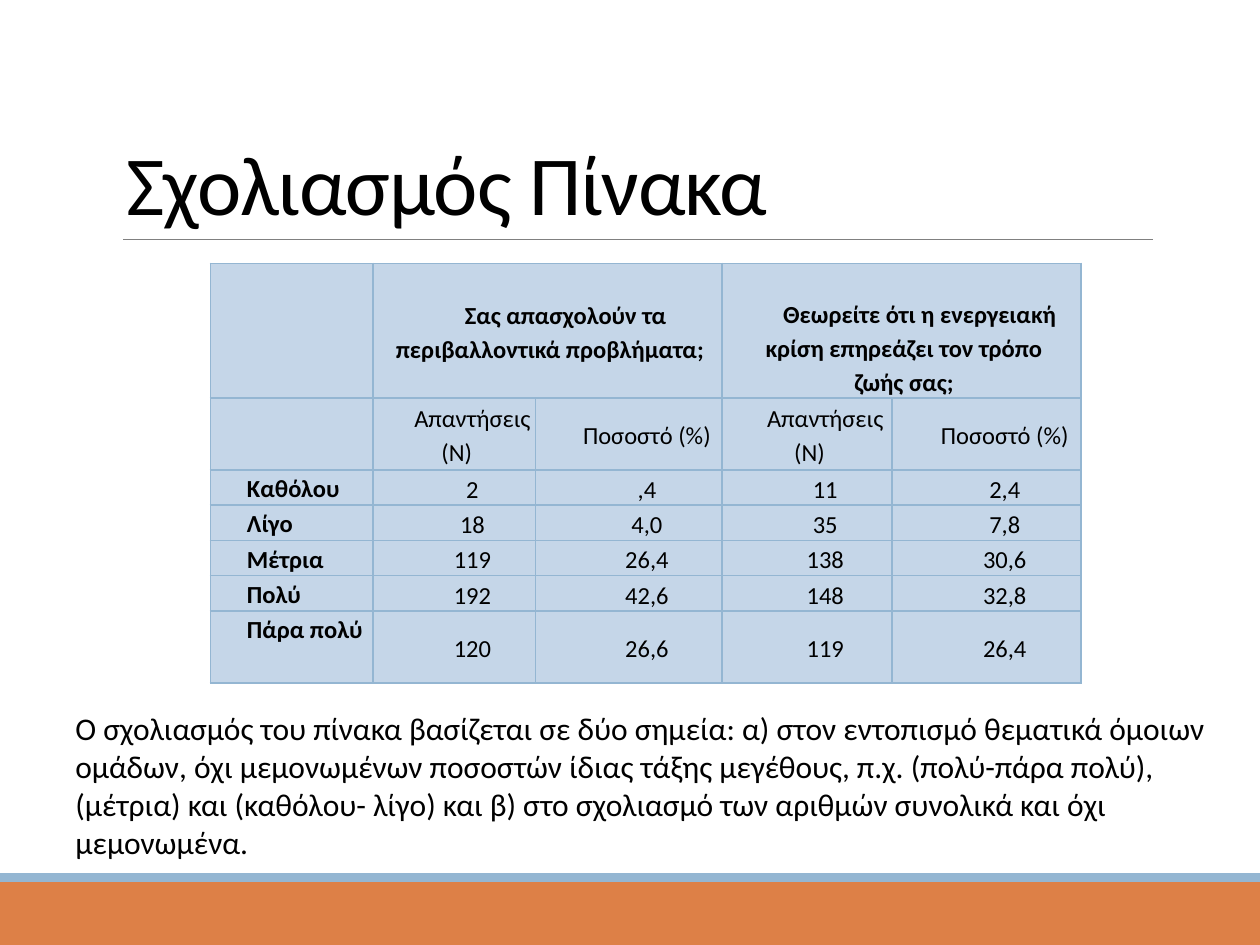
from dataclasses import dataclass

from lxml import etree
from pptx import Presentation
from pptx import util as u
from pptx.dml.color import RGBColor
from pptx.enum import shapes, text
from pptx.oxml import ns

Inches = u.Inches


@dataclass(frozen=True)
class Theme:
    font: str = "Calibri"
    ink: str = "000000"
    orange: str = "DD8047"
    blue: str = "94B6D2"
    cell: str = "C5D6E8"
    rule: str = "808080"
    title_size: int = 48
    body_size: int = 18
    table_size: int = 14


THEME = Theme()
CENTER, LEFT = text.PP_ALIGN.CENTER, text.PP_ALIGN.LEFT
MIDDLE, TOP, BOTTOM = (text.MSO_ANCHOR.MIDDLE, text.MSO_ANCHOR.TOP,
                       text.MSO_ANCHOR.BOTTOM)

TITLE = "Σχολιασμός Πίνακα"
COMMENT = ("Ο σχολιασμός του πίνακα βασίζεται σε δύο σημεία: α) στον εντοπισμό "
           "θεματικά όμοιων ομάδων, όχι μεμονωμένων ποσοστών ίδιας τάξης μεγέθους, "
           "π.χ. (πολύ-πάρα πολύ), (μέτρια) και (καθόλου- λίγο) και β) στο "
           "σχολιασμό των αριθμών συνολικά και όχι μεμονωμένα.")
QUESTIONS = [
    ("Σας απασχολούν τα περιβαλλοντικά προβλήματα;", MIDDLE),
    ("Θεωρείτε ότι η ενεργειακή κρίση επηρεάζει τον τρόπο\vζωής σας;", BOTTOM),
]
MEASURES = ["Απαντήσεις (Ν)", "Ποσοστό (%)"]
ANSWERS = [
    ("Καθόλου", "2", ",4", "11", "2,4"),
    ("Λίγο", "18", "4,0", "35", "7,8"),
    ("Μέτρια", "119", "26,4", "138", "30,6"),
    ("Πολύ", "192", "42,6", "148", "32,8"),
    ("Πάρα πολύ", "120", "26,6", "119", "26,4"),
]
COLUMN_WIDTHS = [1.29, 1.29, 1.48, 1.35, 1.5]
ROW_HEIGHTS = [1.07, 0.57, 0.28, 0.28, 0.28, 0.28, 0.57]


def write(frame, content, size, bold=False, align=LEFT, anchor=TOP, spacing=1.0):
    frame.word_wrap = True
    frame.vertical_anchor = anchor
    frame.text = content
    paragraph = frame.paragraphs[0]
    paragraph.alignment = align
    paragraph.line_spacing = spacing
    for run in paragraph.runs:
        run.font.name = THEME.font
        run.font.size = u.Pt(size)
        run.font.bold = bold
        run.font.color.rgb = RGBColor.from_string(THEME.ink)
    return paragraph


def place(shape, box):
    shape.left, shape.top, shape.width, shape.height = map(Inches, box)


def add_band(slide, box, color):
    band = slide.shapes.add_shape(shapes.MSO_SHAPE.RECTANGLE, *map(Inches, box))
    band.shadow.inherit = False
    band.fill.solid()
    band.fill.fore_color.rgb = RGBColor.from_string(color)
    band.line.fill.background()


def add_frame(slide, footer_box, rule_box):
    # Footer: a thin blue strip above an orange band
    left, top, width, height = footer_box
    strip = 0.07
    add_band(slide, (left, top + strip, width, height - strip), THEME.orange)
    add_band(slide, (left, top, width, strip), THEME.blue)
    # Rule under the title
    left, top, width, _ = rule_box
    rule = slide.shapes.add_connector(
        shapes.MSO_CONNECTOR.STRAIGHT, *map(Inches, (left, top, left + width, top)))
    rule.line.color.rgb = RGBColor.from_string(THEME.rule)
    rule.line.width = u.Pt(0.5)
    etree.SubElement(rule.element.spPr, ns.qn("a:effectLst"))


def add_title(slide, box):
    title = slide.shapes.title
    place(title, box)
    paragraph = write(title.text_frame, TITLE, THEME.title_size, anchor=BOTTOM,
                      spacing=0.85)
    paragraph.runs[0].font._element.set("spc", "-50")


def style_cell(cell):
    properties = cell._tc.get_or_add_tcPr()
    for side in ("lnL", "lnR", "lnT", "lnB"):
        border = etree.SubElement(properties, ns.qn("a:" + side), w=str(u.Pt(1)))
        fill = etree.SubElement(border, ns.qn("a:solidFill"))
        etree.SubElement(fill, ns.qn("a:srgbClr"), val=THEME.blue)
    cell.fill.solid()
    cell.fill.fore_color.rgb = RGBColor.from_string(THEME.cell)
    cell.margin_left = cell.margin_right = cell.margin_top = cell.margin_bottom = 0


def write_cell(cell, content, bold=False, align=CENTER, anchor=MIDDLE):
    paragraph = write(cell.text_frame, content, THEME.table_size, bold, align,
                      spacing=1.15)
    cell.vertical_anchor = anchor
    properties = paragraph._p.get_or_add_pPr()
    properties.set("marL", str(Inches(0.04)))
    properties.set("indent", str(Inches(0.25)))


def add_answer_table(slide, box):
    table = slide.shapes.add_table(len(ROW_HEIGHTS), len(COLUMN_WIDTHS),
                                   *map(Inches, box)).table
    table.first_row = table.horz_banding = False
    for column, width in zip(table.columns, COLUMN_WIDTHS):
        column.width = Inches(width)
    for row, height in zip(table.rows, ROW_HEIGHTS):
        row.height = Inches(height)
    for cell in table.iter_cells():
        style_cell(cell)
    # Each question spans its two measures
    for index, (question, anchor) in enumerate(QUESTIONS):
        first = 1 + index * len(MEASURES)
        table.cell(0, first).merge(table.cell(0, first + len(MEASURES) - 1))
        write_cell(table.cell(0, first), question, bold=True, anchor=anchor)
        for offset, measure in enumerate(MEASURES):
            write_cell(table.cell(1, first + offset), measure)
    # Answers
    for row, (label, *values) in enumerate(ANSWERS, start=2):
        write_cell(table.cell(row, 0), label, bold=True, align=LEFT, anchor=TOP)
        for column, value in enumerate(values, start=1):
            write_cell(table.cell(row, column), value)


def add_comment(slide, box):
    comment = slide.shapes.add_textbox(*map(Inches, box))
    write(comment.text_frame, COMMENT, THEME.body_size)


def main():
    presentation = Presentation()
    presentation.slide_width, presentation.slide_height = Inches(10), Inches(7.5)
    slide = presentation.slides.add_slide(presentation.slide_layouts[5])
    add_frame(slide, footer_box=(0, 6.93, 10, 0.57), rule_box=(0.98, 1.9, 8.17, 0))
    add_answer_table(slide, (1.67, 2.09, sum(COLUMN_WIDTHS), sum(ROW_HEIGHTS)))
    add_comment(slide, (0.5, 5.58, 9.25, 1.31))
    add_title(slide, (0.9, 0.31, 8.25, 1.59))
    presentation.save("out.pptx")


if __name__ == "__main__":
    main()
